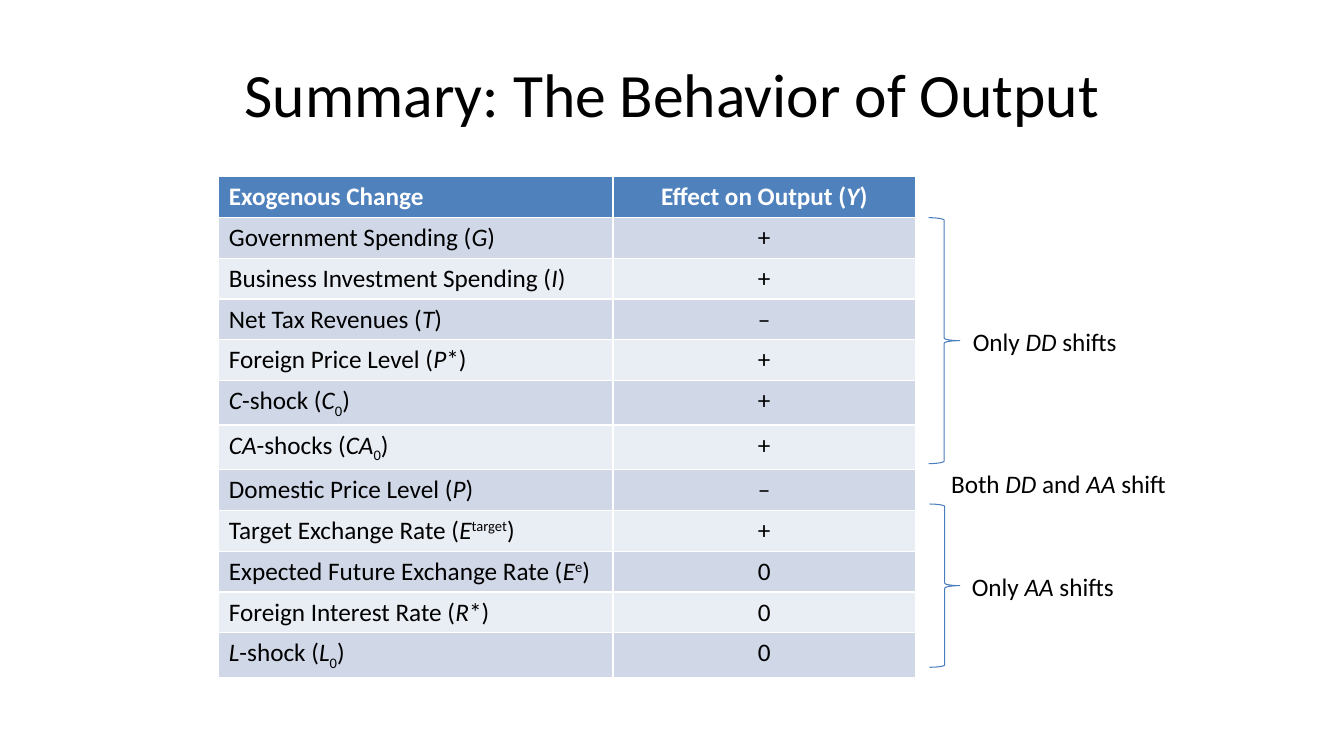
from dataclasses import dataclass

from pptx import Presentation
from pptx.dml.color import RGBColor
from pptx.enum.shapes import MSO_SHAPE as Shape
from pptx.enum.text import MSO_ANCHOR as Anchor, MSO_AUTO_SIZE as AutoSize, PP_ALIGN as Align
from pptx.util import Inches, Pt


@dataclass(frozen=True)
class Theme:
    """Hold the colours, font and type sizes of the slide."""
    font: str = "Calibri"
    title_size: int = 44
    body_size: int = 18
    text: str = "000000"
    header_text: str = "FFFFFF"
    header_fill: str = "4F81BD"
    bands: tuple = ("D0D8E8", "E9EDF4")
    brace: str = "4B7EBC"


THEME = Theme()
ITALIC = "/"
BASELINES = {"^": "30000", "~": "-25000"}

HEADER = ("Exogenous Change", "Effect on Output (|/Y|)")
EFFECTS = (
    ("Government Spending (|/G|)", "+"),
    ("Business Investment Spending (|/I|)", "+"),
    ("Net Tax Revenues (|/T|)", "–"),
    ("Foreign Price Level (|/P|*)", "+"),
    ("/C|-shock (|/C|~0|)", "+"),
    ("/CA|-shocks (|/CA|~0|)", "+"),
    ("Domestic Price Level (|/P|)", "–"),
    ("Target Exchange Rate (|/E|^target|)", "+"),
    ("Expected Future Exchange Rate (|/E|^e|)", "0"),
    ("Foreign Interest Rate (|/R|*)", "0"),
    ("/L|-shock (|/L|~0|)", "0"),
)
BRACES = ((9.21, 2.16, 0.31, 2.44), (9.22, 5, 0.3, 1.62))
SHIFT_LABELS = (
    ("Only |/DD| shifts", (9.55, 3.19, 1.96, 0.4), Align.LEFT),
    ("Only |/AA |shifts", (9.54, 5.62, 1.96, 0.4), Align.LEFT),
    ("Both |/DD| and |/AA| shift", (9.25, 4.6, 2.41, 0.4), Align.RIGHT),
)


def inches(box):
    """Convert left, top, width and height to lengths."""
    return [Inches(value) for value in box]


def write_text(frame, markup, align, size=THEME.body_size, color=THEME.text, bold=False):
    """Write pieces parted by | where / is italic, ^ raised and ~ lowered."""
    paragraph = frame.paragraphs[0]
    paragraph.alignment = align
    font = paragraph.font
    font.name, font.size, font.bold = THEME.font, Pt(size), bold
    font.color.rgb = RGBColor.from_string(color)
    for piece in markup.split("|"):
        mark = piece[0]
        marked = mark == ITALIC or mark in BASELINES
        run = paragraph.add_run()
        run.text = piece[1:] if marked else piece
        if mark == ITALIC:
            run.font.italic = True
        elif marked:
            run._r.get_or_add_rPr().set("baseline", BASELINES[mark])


def add_title(slide, text):
    """Place and fill the title placeholder."""
    title = slide.shapes.title
    title.left, title.top, title.width, title.height = inches((0.67, 0.3, 12, 1.25))
    title.text_frame.vertical_anchor = Anchor.MIDDLE
    write_text(title.text_frame, text, Align.CENTER, THEME.title_size)


def add_effects_table(slide):
    """Add the table of exogenous changes with its banded rows."""
    rows = (HEADER, *EFFECTS)
    box = inches((2.17, 1.75, 6.91, 4.87))
    table = slide.shapes.add_table(len(rows), len(HEADER), *box).table
    for column, width in zip(table.columns, (3.91, 3)):
        column.width = Inches(width)
    for row_index, row in enumerate(rows):
        is_header = row_index == 0
        fill = THEME.header_fill if is_header else THEME.bands[(row_index - 1) % 2]
        color = THEME.header_text if is_header else THEME.text
        for column_index, markup in enumerate(row):
            cell = table.cell(row_index, column_index)
            cell.fill.solid()
            cell.fill.fore_color.rgb = RGBColor.from_string(fill)
            align = Align.CENTER if column_index else Align.LEFT
            write_text(cell.text_frame, markup, align, color=color, bold=is_header)


def add_brace(slide, box):
    """Add a right brace that groups table rows."""
    brace = slide.shapes.add_shape(Shape.RIGHT_BRACE, *inches(box))
    brace.shadow.inherit = False
    brace.fill.background()
    brace.line.color.rgb = RGBColor.from_string(THEME.brace)
    brace.line.width = Pt(0.75)


def add_label(slide, markup, box, align):
    """Add a text box that names the shifting curves."""
    frame = slide.shapes.add_textbox(*inches(box)).text_frame
    frame.word_wrap = True
    frame.auto_size = AutoSize.SHAPE_TO_FIT_TEXT
    write_text(frame, markup, align)


def main():
    """Build the slide and save it."""
    presentation = Presentation()
    presentation.slide_width, presentation.slide_height = Inches(13.33), Inches(7.5)
    slide = presentation.slides.add_slide(presentation.slide_layouts[5])
    add_title(slide, "Summary: The Behavior of Output")
    add_effects_table(slide)
    for box in BRACES:
        add_brace(slide, box)
    for label in SHIFT_LABELS:
        add_label(slide, *label)
    presentation.save("out.pptx")


if __name__ == "__main__":
    main()
